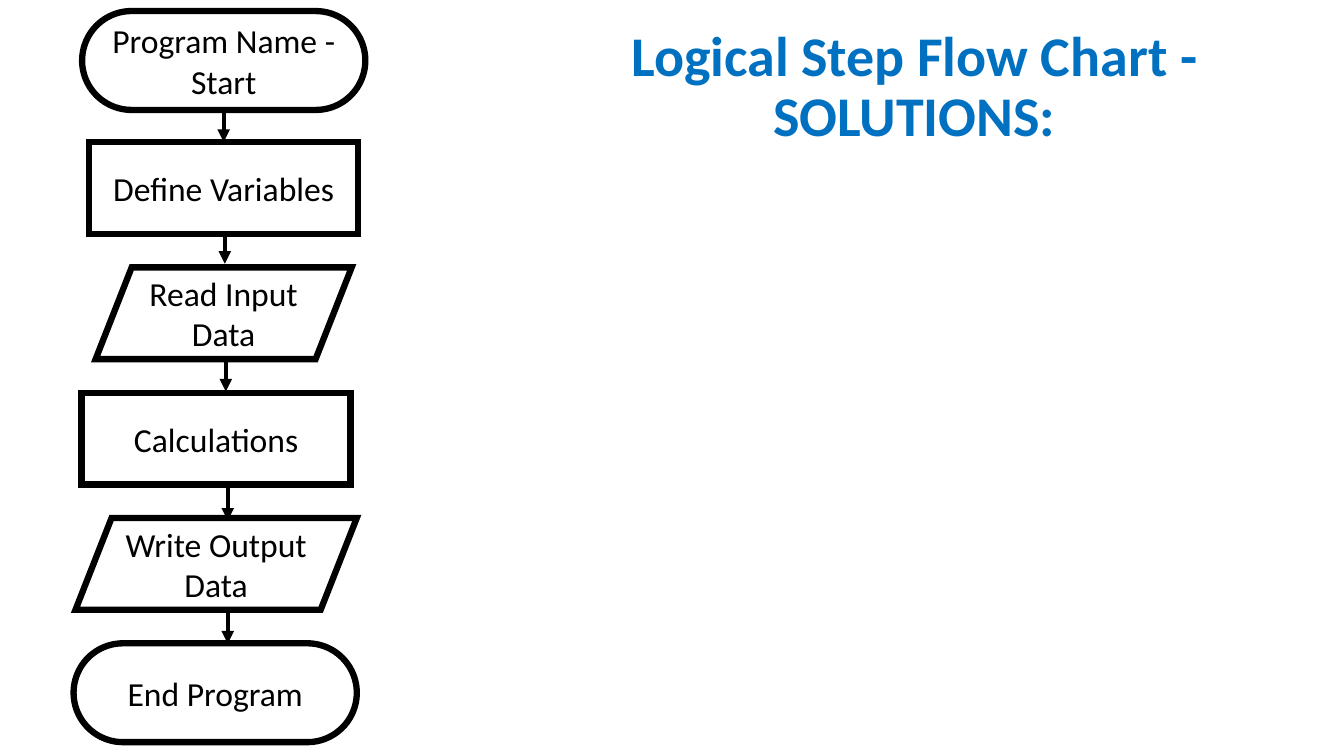
from dataclasses import dataclass
from itertools import pairwise

from pptx import Presentation
from pptx.dml.color import RGBColor
from pptx.enum.shapes import MSO_CONNECTOR as Connector, MSO_SHAPE as Preset
from pptx.enum.text import MSO_ANCHOR as Anchor, PP_ALIGN as Align
from pptx.oxml.ns import qn
from pptx.oxml.xmlchemy import OxmlElement
from pptx.shapes.autoshape import Shape
from pptx.slide import Slide
from pptx.util import Pt


@dataclass(frozen=True)
class Theme:
    font: str = "Calibri"
    ink: RGBColor = RGBColor(0, 0, 0)
    paper: RGBColor = RGBColor(255, 255, 255)
    accent: RGBColor = RGBColor(0x00, 0x70, 0xC0)
    title_size: float = 40
    step_size: float = 24
    outline: float = 4.5
    arrow: float = 3


@dataclass(frozen=True)
class StepKind:
    preset: Preset
    height: float
    adjustment: float | None = None
    filled: bool = False


@dataclass(frozen=True)
class Step:
    text: str
    kind: StepKind
    center: float
    top: float
    width: float


@dataclass(frozen=True)
class Arrow:
    x: float
    top: float
    joined: bool = False


THEME = Theme()
ARROW_LENGTH = 23.4
FIRST_TOP, PITCH = 101.5, 89.5

TERMINATOR = StepKind(Preset.ROUNDED_RECTANGLE, 70.6, 0.5, True)
PROCESS = StepKind(Preset.RECTANGLE, 65.5)
DATA = StepKind(Preset.PARALLELOGRAM, 65.5, 0.393)

STEPS = [
    Step("Program Name - Start", TERMINATOR, 159.8, 7.9, 202.3),
    Step("Define Variables", PROCESS, 159.8, FIRST_TOP, 192.2),
    Step("Read Input Data", DATA, 159.8, FIRST_TOP + PITCH, 182.9),
    Step("Calculations", PROCESS, 154.4, FIRST_TOP + 2 * PITCH, 192.2),
    Step("Write Output Data", DATA, 154.4, FIRST_TOP + 3 * PITCH, 200.9),
    Step("End Program", TERMINATOR, 153.7, FIRST_TOP + 4 * PITCH, 202.3),
]
ARROWS = [
    Arrow(159.8, 78.5, joined=True),
    Arrow(160.6, 165),
    Arrow(161.3, 256.3),
    Arrow(162.7, 348.5),
    Arrow(162.7, 436.3),
]


def write_text(shape: Shape, text: str, size: float, color: RGBColor,
               bold: bool = False, line_spacing: float = 1.0) -> None:
    frame = shape.text_frame
    frame.word_wrap = True
    frame.vertical_anchor = Anchor.MIDDLE
    paragraph = frame.paragraphs[0]
    paragraph.alignment = Align.CENTER
    paragraph.line_spacing = line_spacing
    run = paragraph.add_run()
    run.text = text
    font_format = {"name": THEME.font, "size": Pt(size), "bold": bold}
    for attribute, value in font_format.items():
        setattr(run.font, attribute, value)
    run.font.color.rgb = color


def draw_step(slide: Slide, step: Step) -> Shape:
    kind = step.kind
    shape = slide.shapes.add_shape(
        kind.preset, Pt(step.center - step.width / 2), Pt(step.top),
        Pt(step.width), Pt(kind.height))
    shape.shadow.inherit = False
    if kind.adjustment is not None:
        shape.adjustments[0] = kind.adjustment
    if kind.filled:
        shape.fill.solid()
        shape.fill.fore_color.rgb = THEME.paper
    else:
        shape.fill.background()
    shape.line.color.rgb = THEME.ink
    shape.line.width = Pt(THEME.outline)
    # Sharp outline corners
    miter = OxmlElement("a:miter")
    miter.set("lim", "800000")
    shape.line._get_or_add_ln().append(miter)
    write_text(shape, step.text, THEME.step_size, THEME.ink)
    return shape


def draw_arrow(slide: Slide, arrow: Arrow, source: Shape, target: Shape) -> None:
    connector = slide.shapes.add_connector(
        Connector.STRAIGHT, Pt(arrow.x), Pt(arrow.top),
        Pt(arrow.x), Pt(arrow.top + ARROW_LENGTH))
    if arrow.joined:
        connector.begin_connect(source, 2)
        connector.end_connect(target, 0)
    connector.line.color.rgb = THEME.ink
    connector.line.width = Pt(THEME.arrow)
    head = OxmlElement("a:tailEnd")
    head.set("type", "triangle")
    properties = connector._element.spPr
    properties.find(qn("a:ln")).append(head)
    properties.append(OxmlElement("a:effectLst"))


def main() -> None:
    presentation = Presentation()
    presentation.slide_width, presentation.slide_height = Pt(960), Pt(540)
    slide = presentation.slides.add_slide(presentation.slide_layouts[6])

    # Title
    title = slide.shapes.add_textbox(Pt(351.4), Pt(36), Pt(603.4), Pt(54))
    write_text(title, "Logical Step Flow Chart - SOLUTIONS:",
               THEME.title_size, THEME.accent, bold=True, line_spacing=0.9)

    # Flow chart steps, then the arrows between neighbours
    shapes = [draw_step(slide, step) for step in STEPS]
    for arrow, (source, target) in zip(ARROWS, pairwise(shapes)):
        draw_arrow(slide, arrow, source, target)

    presentation.save("out.pptx")


if __name__ == "__main__":
    main()
